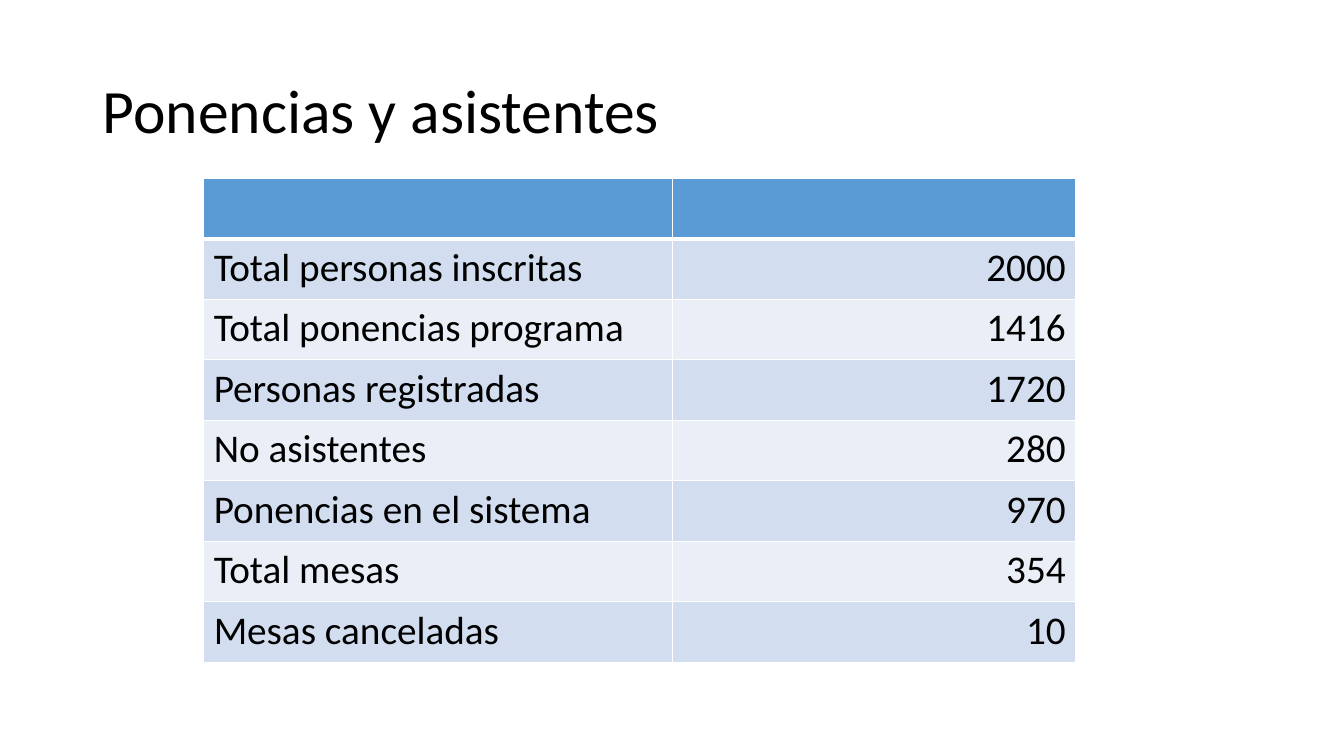
from lxml import etree
from pptx import Presentation
from pptx.dml.color import RGBColor
from pptx.enum.text import MSO_ANCHOR, PP_ALIGN
from pptx.oxml.ns import qn
from pptx.util import Inches, Pt

LEFT, RIGHT = PP_ALIGN.LEFT, PP_ALIGN.RIGHT
MIDDLE = MSO_ANCHOR.MIDDLE
BLACK = RGBColor(0x00, 0x00, 0x00)
WHITE = RGBColor(0xFF, 0xFF, 0xFF)
HEADER_BLUE = RGBColor(0x5B, 0x9B, 0xD5)
BANDS = (RGBColor(0xD2, 0xDE, 0xEF), RGBColor(0xEA, 0xEF, 0xF7))
TITLE_ONLY = 5

ATTENDANCE = [
    ("Total personas inscritas", "2000"),
    ("Total ponencias programa", "1416"),
    ("Personas registradas", "1720"),
    ("No asistentes", "280"),
    ("Ponencias en el sistema", "970"),
    ("Total mesas", "354"),
    ("Mesas canceladas", "10"),
]


class SlideBuilder:
    """Holds the text style and the current slide."""

    font_name = "Calibri"

    def __init__(self, page):
        """Keep the page that receives the elements."""
        self.page = page

    def add_text(self, para, text, size, alignment=LEFT):
        """Add one styled run to a paragraph."""
        para.alignment = alignment
        span = para.add_run()
        span.text = text
        span.font.name = self.font_name
        span.font.size = Pt(size)
        span.font.color.rgb = BLACK

    def add_title(self, text, left, top, width, height):
        """Place and fill the title placeholder."""
        box = self.page.shapes.title
        box.left, box.top = Inches(left), Inches(top)
        box.width, box.height = Inches(width), Inches(height)
        box.text_frame.word_wrap = True
        box.text_frame.vertical_anchor = MIDDLE
        para = box.text_frame.paragraphs[0]
        para.line_spacing = 0.9
        self.add_text(para, text, 44)

    def set_borders(self, cell, top=1, bottom=1):
        """Draw white borders of the given point widths around a cell."""
        properties = cell._tc.get_or_add_tcPr()
        for side, points in (("L", 1), ("R", 1), ("T", top), ("B", bottom)):
            line = etree.SubElement(properties, qn(f"a:ln{side}"), w=str(Pt(points)))
            fill = etree.SubElement(line, qn("a:solidFill"))
            etree.SubElement(fill, qn("a:srgbClr"), val=str(WHITE))

    def add_banded_table(self, records, left, top, widths, row_height):
        """Add a table with an empty header and banded rows."""
        rows = [("", "")] + records
        table = self.page.shapes.add_table(
            len(rows), len(widths), Inches(left), Inches(top),
            Inches(sum(widths)), Inches(row_height * len(rows))).table
        for column, width in zip(table.columns, widths):
            column.width = Inches(width)
        for row_index, values in enumerate(rows):
            table.rows[row_index].height = Inches(row_height)
            color = BANDS[(row_index - 1) % 2] if row_index else HEADER_BLUE
            for column_index, value in enumerate(values):
                cell = table.cell(row_index, column_index)
                self.set_borders(cell, top=3 if row_index == 1 else 1,
                                 bottom=3 if row_index == 0 else 1)
                cell.fill.solid()
                cell.fill.fore_color.rgb = color
                if value:
                    self.add_text(cell.text_frame.paragraphs[0], value, 28,
                                  RIGHT if column_index else LEFT)


def main():
    """Build and save the deck."""
    deck = Presentation()
    deck.slide_width, deck.slide_height = Inches(13.33), Inches(7.5)
    page = deck.slides.add_slide(deck.slide_layouts[TITLE_ONLY])
    builder = SlideBuilder(page)
    builder.add_title("Ponencias y asistentes", 0.92, 0.4, 11.5, 1.45)
    builder.add_banded_table(ATTENDANCE, 2.02, 1.77, (4.65, 4), 0.6)
    deck.save("out.pptx")


if __name__ == "__main__":
    main()
